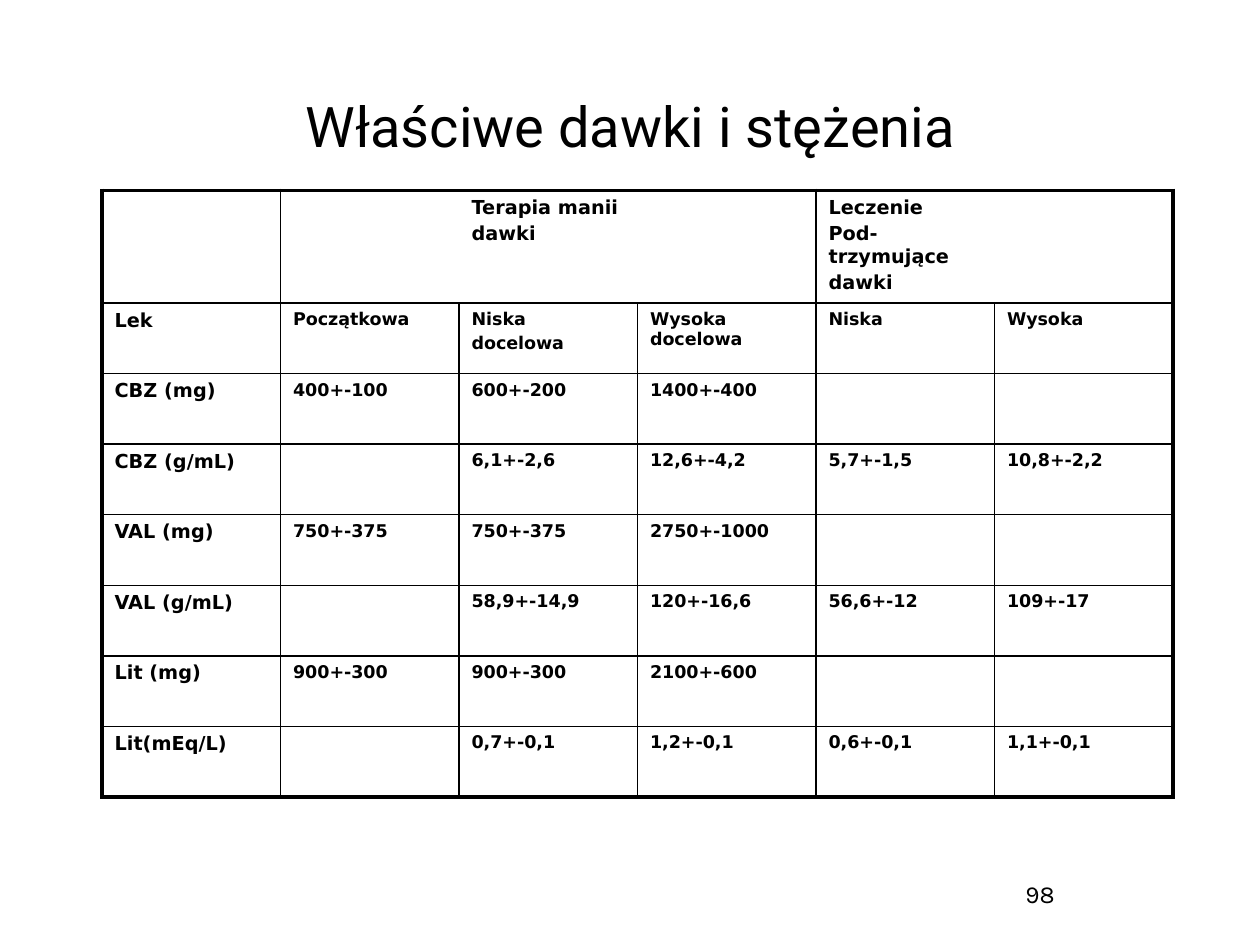
from lxml.etree import SubElement as Sub
from pptx import Presentation
from pptx.dml.color import RGBColor
from pptx.enum.shapes import MSO_SHAPE as Kind
from pptx.enum.text import MSO_ANCHOR as Anchor, PP_ALIGN as Align
from pptx.oxml.ns import qn
from pptx.util import Inches, Pt

INK = "000000"
THICK, THIN = 2.25, 1


def color(code):
    return RGBColor.from_string(code)


def write(par, text, face, size, bold=False):
    run = par.add_run()
    run.text = text
    font = run.font
    font.name, font.size, font.bold = face, Pt(size), bold
    font.color.rgb = color(INK)


deck = Presentation()
deck.slide_width, deck.slide_height = Inches(10), Inches(7.5)
slide = deck.slides.add_slide(deck.slide_layouts[6])
shapes = slide.shapes

# Title and page number
title = shapes.add_textbox(Inches(0.63), Inches(0.33), Inches(8.75), Inches(1.33))
page = shapes.add_shape(Kind.ROUNDED_RECTANGLE, Inches(7.17), Inches(6.83),
                        Inches(2.17), Inches(0.52))
page.shadow.inherit = False
page.fill.background()
page.line.fill.background()
for box, text, face, size in ((title, "Właściwe dawki i stężenia", "Roboto", 32),
                              (page, "98", "Karla", 14)):
    frame = box.text_frame
    frame.word_wrap = True
    frame.vertical_anchor = Anchor.MIDDLE
    par = frame.paragraphs[0]
    par.alignment = Align.CENTER
    write(par, text, face, size)

# Table text: a line break starts a new paragraph
rows = [
    ["", "", "Terapia manii\ndawki", "", "Leczenie\nPod-trzymujące\ndawki", ""],
    ["Lek", "Początkowa", "Niska\ndocelowa", "Wysoka docelowa", "Niska", "Wysoka"],
    ["CBZ (mg)", "400+-100", "600+-200", "1400+-400", "", ""],
    ["CBZ (g/mL)", "", "6,1+-2,6", "12,6+-4,2", "5,7+-1,5", "10,8+-2,2"],
    ["VAL (mg)", "750+-375", "750+-375", "2750+-1000", "", ""],
    ["VAL (g/mL)", "", "58,9+-14,9", "120+-16,6", "56,6+-12", "109+-17"],
    ["Lit (mg)", "900+-300", "900+-300", "2100+-600", "", ""],
    ["Lit(mEq/L)", "", "0,7+-0,1", "1,2+-0,1", "0,6+-0,1", "1,1+-0,1"],
]
tall, wide = len(rows), len(rows[0])
head, step = 0.88, 0.56
grid = shapes.add_table(tall, wide, Inches(0.81), Inches(1.51), Inches(8.5),
                        Inches(head + step * (tall - 1))).table
grid.first_row = grid.horz_banding = False
for col in grid.columns:
    col.width = Inches(8.5 / wide)
for r, row in enumerate(grid.rows):
    row.height = Inches(step if r else head)

# Column edges left open in the group header row
OPEN = {2, 3, 5}

for r, row in enumerate(rows):
    for c, text in enumerate(row):
        cell = grid.cell(r, c)
        size = 11 if r == 0 or c == 0 else 10
        if text:
            for n, line in enumerate(text.split("\n")):
                frame = cell.text_frame
                par = frame.add_paragraph() if n else frame.paragraphs[0]
                if n:
                    par.space_before = Pt(size * 0.2)
                write(par, line, "DejaVu Sans", size, True)

        # Thick outer frame, thin inner rules
        props = cell._tc.get_or_add_tcPr()
        for side, edge, last in (("L", c, wide), ("R", c + 1, wide),
                                 ("T", r, tall), ("B", r + 1, tall)):
            width = THICK if edge in (0, last) else THIN
            rule = Sub(props, qn("a:ln" + side), w=str(Pt(width)))
            if r == 0 and side in "LR" and edge in OPEN:
                Sub(rule, qn("a:noFill"))
            else:
                Sub(Sub(rule, qn("a:solidFill")), qn("a:srgbClr"), val=INK)
        cell.fill.background()

deck.save("out.pptx")
